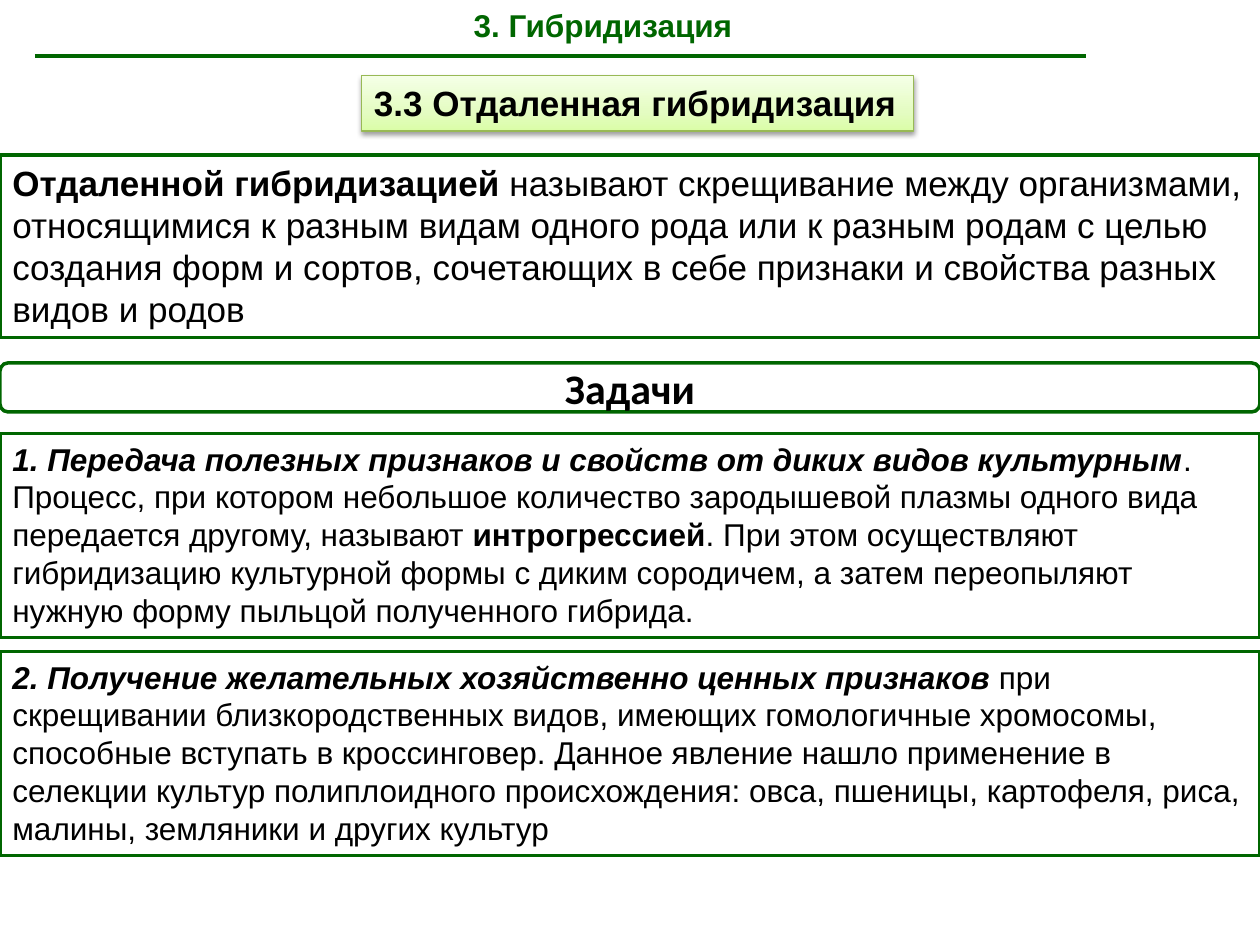
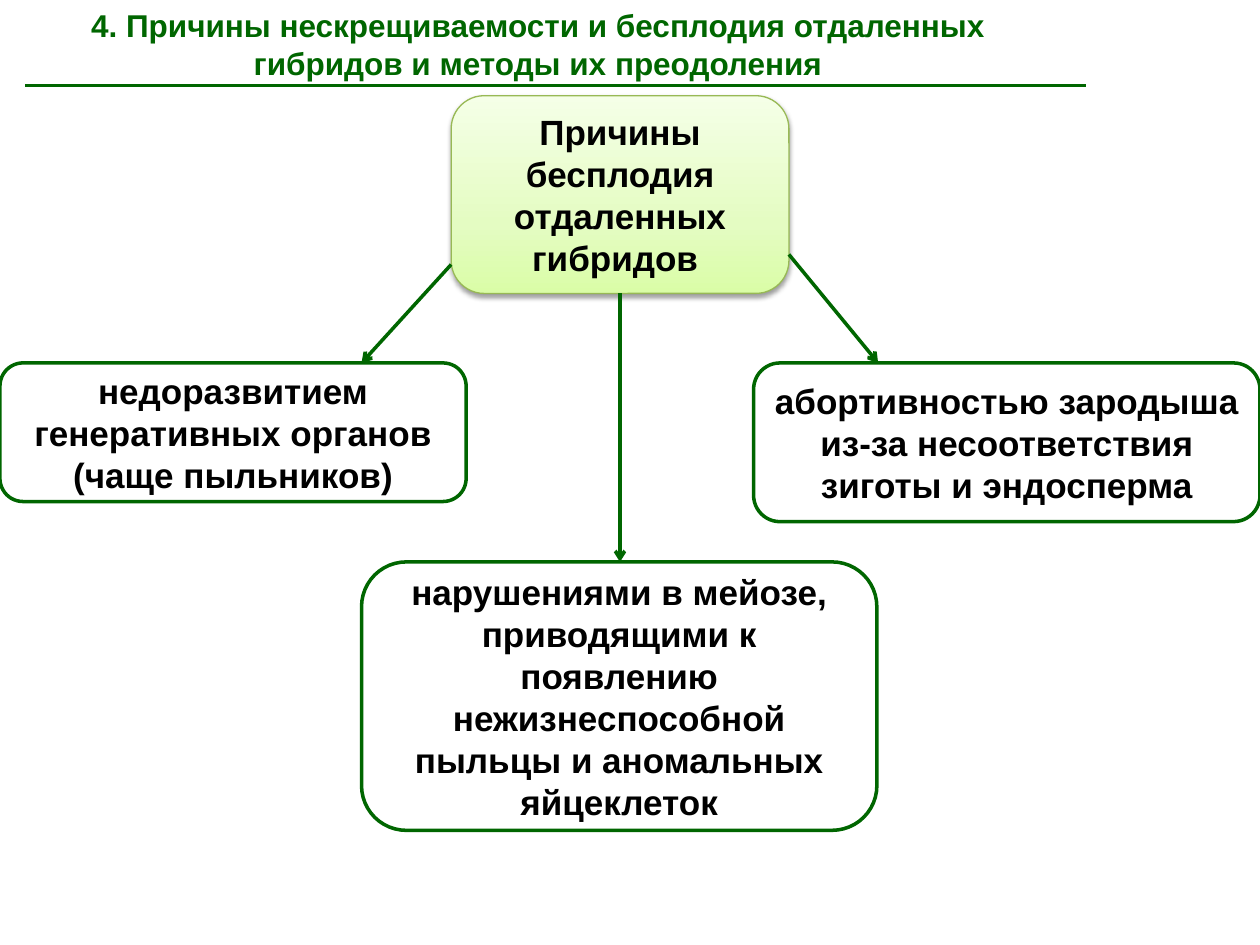
from dataclasses import dataclass

from pptx import Presentation
from pptx.dml.color import RGBColor
from pptx.enum import shapes, text
from pptx.oxml import parse_xml
from pptx.oxml.ns import nsdecls, qn
from pptx.util import Pt


@dataclass(frozen=True)
class Theme:
    green: str = "006600"
    ink: str = "000000"
    paper: str = "FFFFFF"
    accent_edge: str = "98B955"
    accent_stops: tuple = ((0, "DAFDA7"), (35, "E4FCC2"), (100, "F5FFE7"))
    font: str = "Arial"
    heading_font: str = "Calibri"
    body: int = 18
    large: int = 20
    heading: int = 24
    stroke: float = 2
    thin_stroke: float = 0.75


PLAIN, BOLD, BOLD_ITALIC = (False, False), (True, False), (True, True)
RECT = shapes.MSO_SHAPE.RECTANGLE
ROUNDED = shapes.MSO_SHAPE.ROUNDED_RECTANGLE
LEFT, CENTER = text.PP_ALIGN.LEFT, text.PP_ALIGN.CENTER
TOP, MIDDLE = text.MSO_ANCHOR.TOP, text.MSO_ANCHOR.MIDDLE
RULE_END = 620.6
WIDTH, HEIGHT = 720, 540


class Deck:
    def __init__(self, theme):
        self.theme = theme
        self.file = Presentation()
        self.file.slide_width, self.file.slide_height = Pt(WIDTH), Pt(HEIGHT)
        self.slide = None

    def new_slide(self):
        self.slide = self.file.slides.add_slide(self.file.slide_layouts[6])

    def set_text(self, holder, runs, size, color=None, font=None,
                 align=LEFT, anchor=TOP, wrap=True, grow=False):
        """Fill a shape with one paragraph of (wording, (bold, italic)) runs."""
        frame = holder.text_frame
        frame.word_wrap = wrap
        frame.vertical_anchor = anchor
        if grow:
            frame.auto_size = text.MSO_AUTO_SIZE.SHAPE_TO_FIT_TEXT
        paragraph = frame.paragraphs[0]
        paragraph.alignment = align
        for wording, (bold, italic) in runs:
            run = paragraph.add_run()
            run.text = wording
            run.font.name = font or self.theme.font
            run.font.size = Pt(size)
            run.font.bold, run.font.italic = bold, italic
            run.font.color.rgb = RGBColor.from_string(color or self.theme.ink)

    def title(self, wording, place, wrap):
        box = self.slide.shapes.add_textbox(*map(Pt, place))
        self.set_text(box, [(wording, BOLD)], self.theme.body, self.theme.green,
                      align=CENTER if wrap else LEFT, wrap=wrap, grow=True)

    def line(self, start, end, arrow=False):
        connector = self.slide.shapes.add_connector(
            shapes.MSO_CONNECTOR.STRAIGHT, *map(Pt, (*start, *end)))
        connector.line.color.rgb = RGBColor.from_string(self.theme.green)
        connector.line.width = Pt(self.theme.stroke)
        properties = connector._element.spPr
        if arrow:
            properties.find(qn("a:ln")).append(
                parse_xml(f'<a:tailEnd {nsdecls("a")} type="arrow"/>'))
        properties.append(parse_xml(f'<a:effectLst {nsdecls("a")}/>'))

    def outlined(self, place, runs, size, kind=RECT, fill=None, **layout):
        """Add a green-edged box, unfilled unless a fill colour is given."""
        box = self.slide.shapes.add_shape(kind, *map(Pt, place))
        box.shadow.inherit = False
        if fill:
            box.fill.solid()
            box.fill.fore_color.rgb = RGBColor.from_string(fill)
        else:
            box.fill.background()
        box.line.color.rgb = RGBColor.from_string(self.theme.green)
        box.line.width = Pt(self.theme.stroke)
        self.set_text(box, runs, size, **layout)
        return box

    def accent(self, place, wording, kind=RECT, **layout):
        """Add a box with a pale green gradient, thin edge and soft shadow."""
        box = self.outlined(place, [(wording, BOLD)], self.theme.large, kind, **layout)
        box.line.color.rgb = RGBColor.from_string(self.theme.accent_edge)
        box.line.width = Pt(self.theme.thin_stroke)
        box.fill.gradient()
        box.fill.gradient_angle = 90
        properties = box._element.spPr
        stops = properties.find(qn("a:gradFill")).find(qn("a:gsLst"))
        for stop in list(stops):
            stops.remove(stop)
        for percent, color in self.theme.accent_stops:
            stops.append(parse_xml(
                f'<a:gs {nsdecls("a")} pos="{percent * 1000}">'
                f'<a:srgbClr val="{color}"/></a:gs>'))
        properties.find(qn("a:effectLst")).append(parse_xml(
            f'<a:outerShdw {nsdecls("a")} blurRad="{Pt(3.1)}" dist="{Pt(1.6)}" '
            f'dir="5400000" rotWithShape="0"><a:srgbClr val="{self.theme.ink}">'
            '<a:alpha val="38000"/></a:srgbClr></a:outerShdw>'))


def distant_hybridization(deck):
    theme = deck.theme
    deck.new_slide()
    deck.line((20, 32), (RULE_END, 32))
    deck.title("3. Гибридизация", (263.5, 0, 169.2, 28.8), wrap=False)
    deck.accent((206.6, 43.2, 315.4, 31.7), "3.3 Отдаленная гибридизация",
                wrap=False, grow=True)
    deck.outlined((0, 88.6, WIDTH, 104.4), [
        ("Отдаленной гибридизацией", BOLD),
        (" называют скрещивание между организмами, относящимися к разным видам "
         "одного рода или к разным родам с целью создания форм и сортов, "
         "сочетающих в себе признаки и свойства разных видов и родов", PLAIN),
    ], theme.large, grow=True)
    deck.outlined((0, 207.4, WIDTH, 28), [("Задачи", BOLD)], theme.heading, ROUNDED,
                  theme.paper, font=theme.heading_font, align=CENTER, anchor=MIDDLE)

    transfer = [
        ("1. Передача полезных признаков и свойств от диких видов культурным",
         BOLD_ITALIC),
        (". Процесс, при котором небольшое количество зародышевой плазмы одного "
         "вида передается другому, называют ", PLAIN),
        ("интрогрессией", BOLD),
        (". При этом осуществляют гибридизацию культурной формы с диким сородичем, "
         "а затем переопыляют нужную форму пыльцой полученного гибрида.", PLAIN),
    ]
    valuable_traits = [
        ("2. Получение желательных хозяйственно ценных признаков ", BOLD_ITALIC),
        ("при скрещивании близкородственных видов, имеющих гомологичные хромосомы, "
         "способные вступать в кроссинговер. Данное явление нашло применение в "
         "селекции культур полиплоидного происхождения: овса, пшеницы, картофеля, "
         "риса, малины, земляники и других культур", PLAIN),
    ]
    for top, task in ((247.7, transfer), (372.2, valuable_traits)):
        deck.outlined((0, top, WIDTH, 116.6), task, theme.body, grow=True)


def sterility_causes(deck):
    deck.new_slide()
    deck.line((14.4, 49), (RULE_END, 49))
    centered = {"kind": ROUNDED, "align": CENTER, "anchor": MIDDLE}
    causes = (
        ((0, 207.4, 266.4, 79.2), "недоразвитием генеративных органов (чаще пыльников)"),
        ((430.6, 207.4, 289.4, 90.7),
         "абортивностью зародыша из-за несоответствия зиготы и эндосперма"),
        ((206.6, 321.1, 294.5, 153.4),
         "нарушениями в мейозе, приводящими к появлению нежизнеспособной пыльцы "
         "и аномальных яйцеклеток"),
    )
    for place, cause in causes:
        deck.outlined(place, [(cause, BOLD)], deck.theme.large, **centered)
    deck.accent((257.8, 54.7, 193, 113), "Причины бесплодия отдаленных гибридов ",
                **centered)
    for start, end in (((450.8, 145.4), (501.8, 207.4)),
                       ((257.8, 151.2), (206.6, 207.4)),
                       ((354.3, 167.7), (354.3, 321.1))):
        deck.line(start, end, arrow=True)
    deck.title("4. Причины нескрещиваемости и бесплодия отдаленных гибридов "
               "и методы их преодоления", (0, 0, 614.9, 51), wrap=True)


def main():
    deck = Deck(Theme())
    distant_hybridization(deck)
    sterility_causes(deck)
    deck.file.save("out.pptx")


if __name__ == "__main__":
    main()
